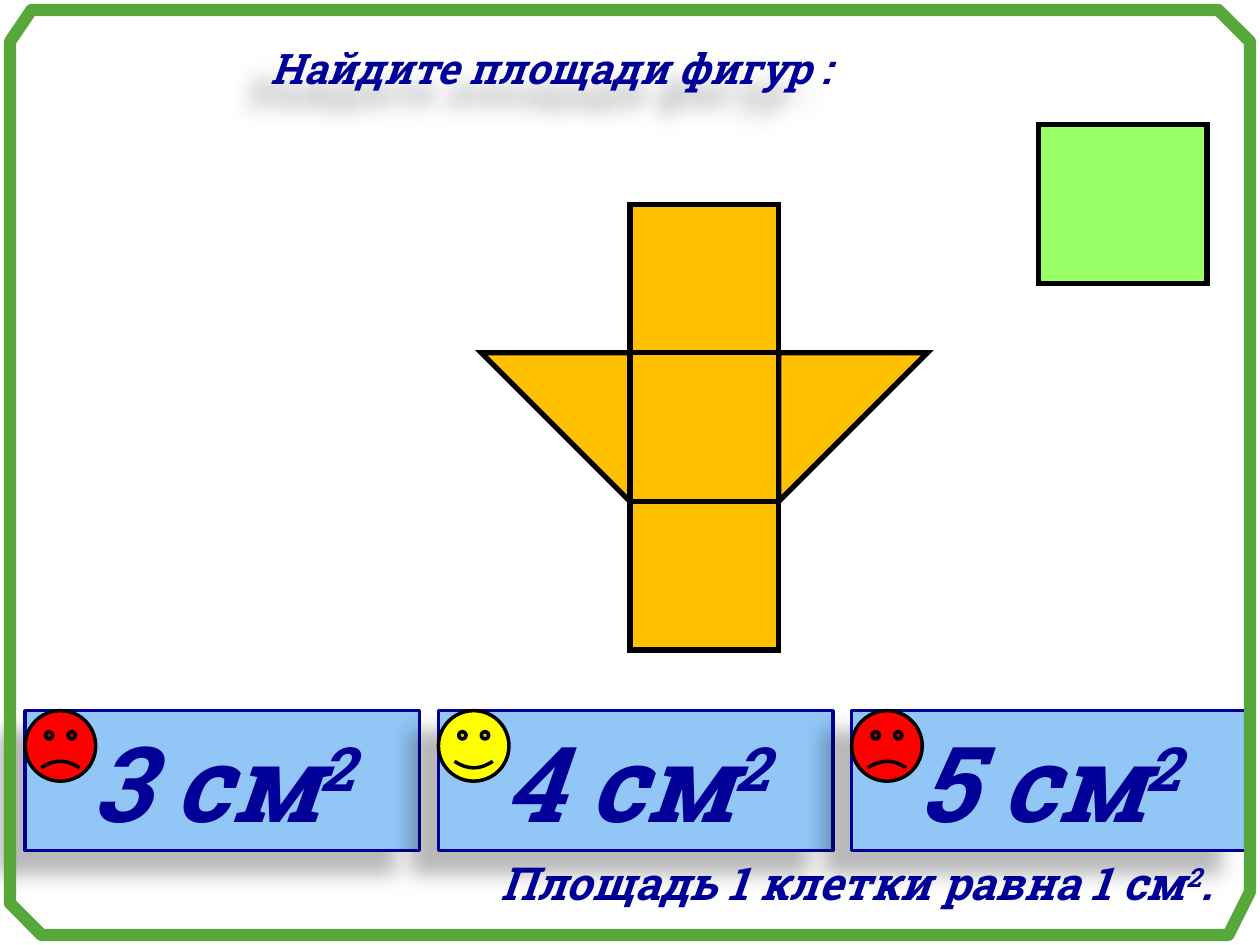
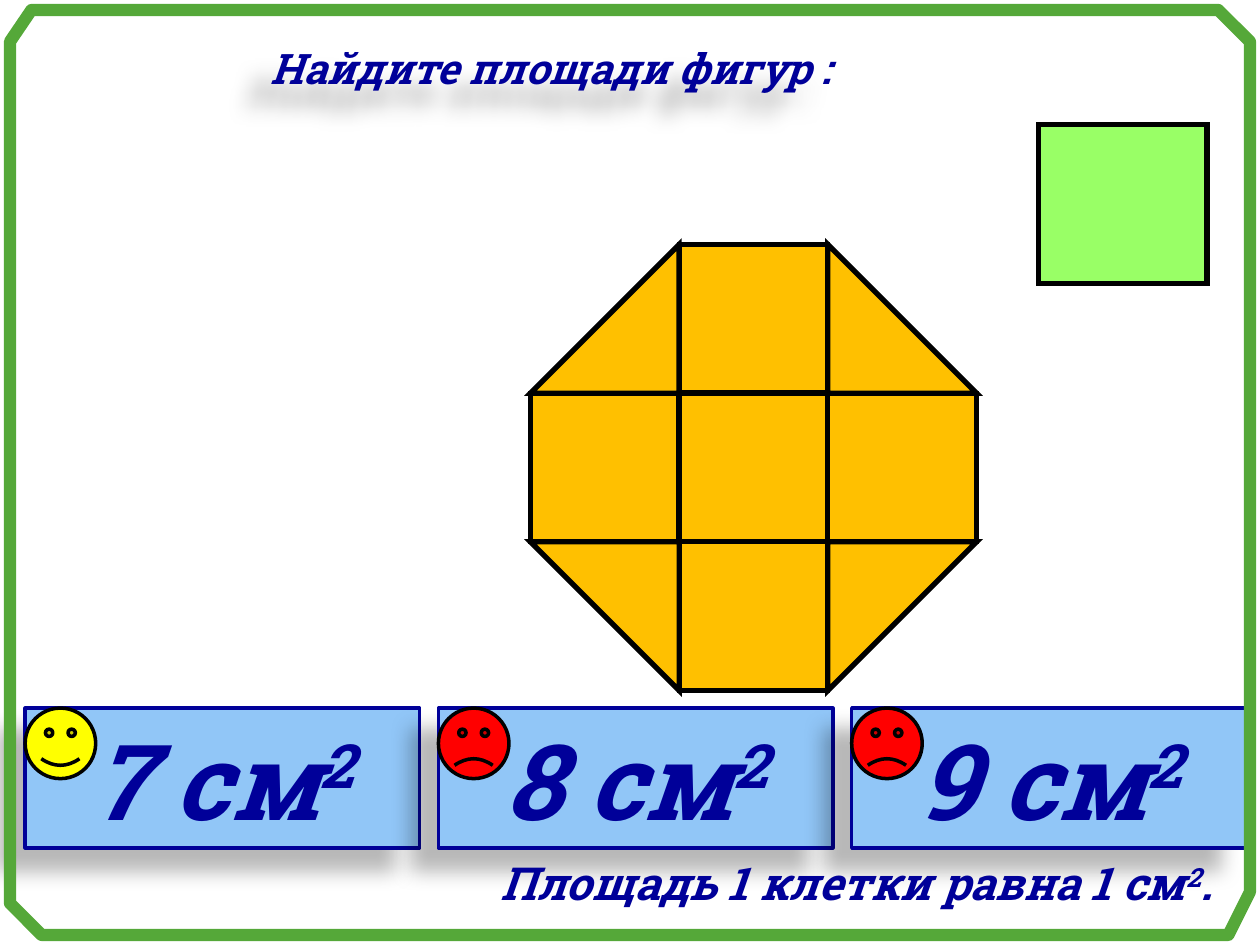
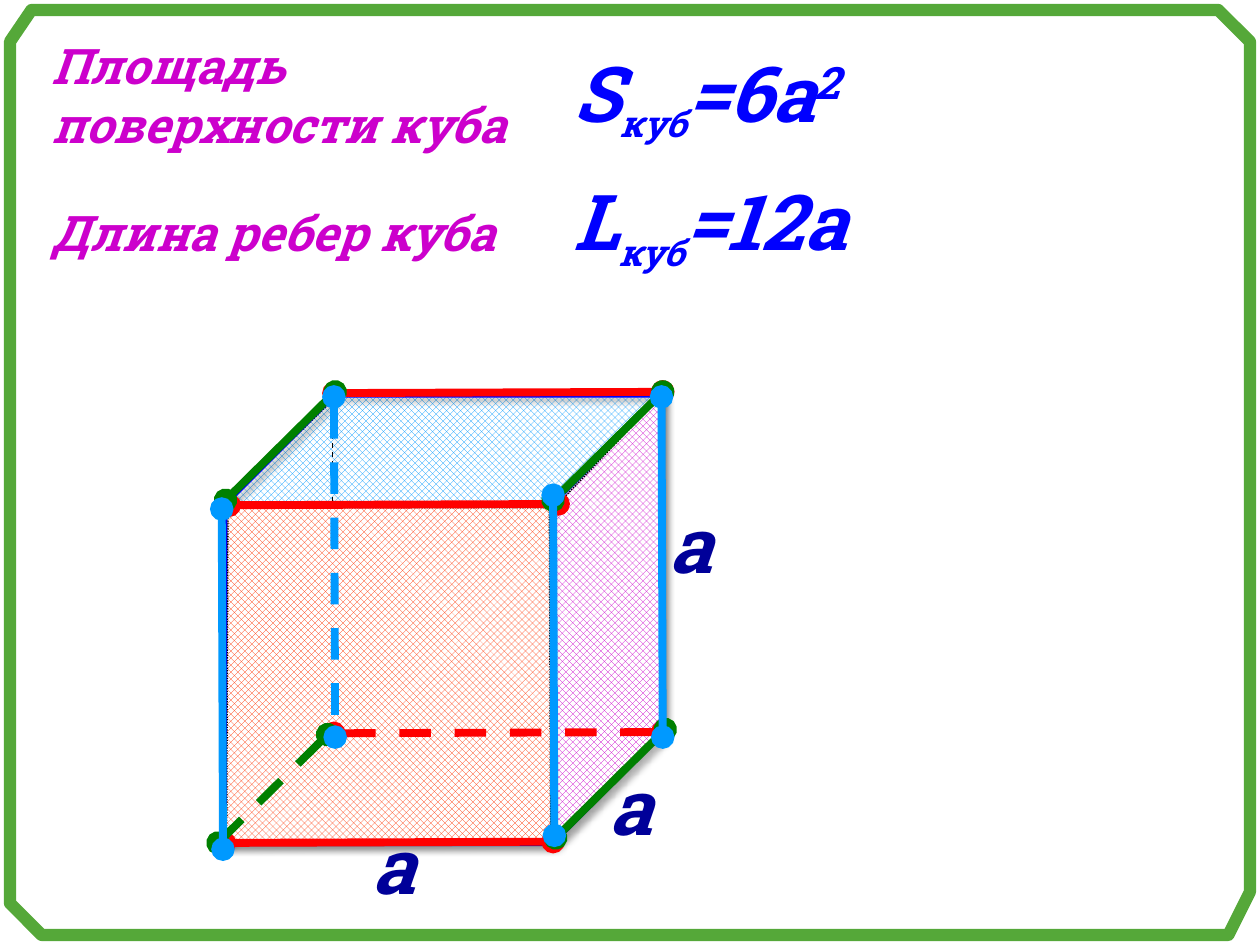
from lxml.etree import SubElement
from pptx import Presentation
from pptx.dml.color import RGBColor
from pptx.enum.dml import MSO_LINE as Dash, MSO_PATTERN as Pat
from pptx.enum.shapes import MSO_CONNECTOR as Conn, MSO_SHAPE as Geo
from pptx.enum.text import MSO_ANCHOR as Anchor, MSO_AUTO_SIZE as Auto, PP_ALIGN as Align
from pptx.oxml import parse_xml
from pptx.oxml.ns import nsdecls, qn
from pptx.util import Inches, Pt

# Shared look
FACE = "Roboto Slab"
NAVY, BLUE, PURPLE, BLACK = "000099", "0000FF", "CC00CC", "000000"
GOLD, LIME, PALE, GREEN = "FFC000", "99FF66", "91C6F7", "55A839"
RED, YELLOW, SKY, LEAF, CORAL = "FF0000", "FFFF00", "0099FF", "008000", "FF3300"
DEEP = (28, 11.8, 19.7, 141)  # alpha %, blur, distance, angle
SOFT = (40, 4, 3, 45)
FRAME = [(0.08, 0.33), (0.08, 7.17), (0.33, 7.42), (9.75, 7.42),
         (9.92, 7.08), (9.92, 0.33), (9.67, 0.08), (0.25, 0.08)]

# Figures drawn on a square grid; each sign is a tile
CELL = 1.18
TURN = {"◣": 0, "◤": 90, "◥": 180, "◢": 270}
PLANE = [" # ", "◥#◤", " # "]
OCTAGON = ["◢#◣", "###", "◥#◤"]


def tint(code):
    return RGBColor.from_string(code)


def box(*sides):
    return [Inches(side) for side in sides]


def cast(shape, shade=None):
    """Give the shape its own effects: one outer shadow or none."""
    effects = parse_xml(f"<a:effectLst {nsdecls('a')}/>")
    if shade:
        alpha, blur, dist, angle = shade
        outer = SubElement(effects, qn("a:outerShdw"), blurRad=str(Pt(blur)),
                           dist=str(Pt(dist)), dir=str(angle * 60000),
                           algn="ctr", rotWithShape="0")
        color = SubElement(outer, qn("a:srgbClr"), val=BLACK)
        SubElement(color, qn("a:alpha"), val=str(alpha * 1000))
    shape._element.spPr.append(effects)


def stroke(shape, color, width, dash=None):
    shape.line.color.rgb = tint(color)
    shape.line.width = Pt(width)
    if dash:
        shape.line.dash_style = dash


def paint(shape, fill, line, width, dash=None, shade=None, sharp=False):
    if fill:
        shape.fill.solid()
        shape.fill.fore_color.rgb = tint(fill)
    else:
        shape.fill.background()
    stroke(shape, line, width, dash)
    if sharp:
        SubElement(shape.line._get_or_add_ln(), qn("a:miter"), lim="800000")
    cast(shape, shade)
    return shape


def write(shape, lines, size, color, align=Align.LEFT, anchor=Anchor.TOP):
    """Each line is a list of runs: (text, baseline %, own size)."""
    frame = shape.text_frame
    look = dict(word_wrap=True, auto_size=Auto.NONE, vertical_anchor=anchor)
    for key, value in look.items():
        setattr(frame, key, value)
    for row, runs in enumerate(lines):
        para = frame.add_paragraph() if row else frame.paragraphs[0]
        para.alignment = align
        for text, base, own in runs:
            run = para.add_run()
            run.text = text
            style = dict(name=FACE, size=Pt(own or size), bold=True, italic=True)
            for key, value in style.items():
                setattr(run.font, key, value)
            run.font.color.rgb = tint(color)
            if base:
                run._r.get_or_add_rPr().set("baseline", str(base * 1000))


def plain(text):
    return [(text, 0, None)]


def label(slide, place, runs, size, color, align=Align.LEFT):
    write(slide.shapes.add_textbox(*box(*place)), [runs], size, color, align)


def head(slide, place, lines, size, color, align=Align.LEFT, shade=None):
    title = slide.shapes.title
    title.left, title.top, title.width, title.height = box(*place)
    title.fill.background()
    cast(title, shade)
    write(title, lines, size, color, align)


def outline(slide, points, close=True):
    first, *rest = [box(*point) for point in points]
    path = slide.shapes.build_freeform(*first, scale=1.0)
    path.add_line_segments(rest, close=close)
    return path.convert_to_shape()


def border(slide):
    paint(outline(slide, FRAME), None, GREEN, 7)


def side(slide, points, color, shade=SOFT):
    """A hatched face of the cube."""
    face = paint(outline(slide, points), None, BLACK, 0.75, Dash.ROUND_DOT, shade)
    face.fill.patterned()
    face.fill.pattern = Pat.OUTLINED_DIAMOND
    face.fill.fore_color.rgb = tint(color)
    face.fill.back_color.rgb = tint("FFFFFF")


def edge(slide, start, end, color, width, dash=None, dots=False, shade=None):
    line = slide.shapes.add_connector(Conn.STRAIGHT, *box(*start, *end))
    stroke(line, color, width, dash)
    if dots:
        for tag in ("a:headEnd", "a:tailEnd"):
            SubElement(line.line._get_or_add_ln(), qn(tag), type="oval")
    cast(line, shade)


def tiles(slide, left, top, rows):
    for row, signs in enumerate(rows):
        for col, sign in enumerate(signs):
            if sign == " ":
                continue
            geo = Geo.RIGHT_TRIANGLE if sign in TURN else Geo.RECTANGLE
            place = box(left + col * CELL, top + row * CELL, CELL, CELL)
            tile = slide.shapes.add_shape(geo, *place)
            tile.rotation = TURN.get(sign, 0)
            paint(tile, GOLD, BLACK, 3, sharp=True)


def answers(slide, top, values, right):
    lefts = [0.2 + 3.28 * col for col in range(len(values))]
    for left, value in zip(lefts, values):
        card = slide.shapes.add_shape(Geo.RECTANGLE, *box(left, top, 3.13, 1.11))
        paint(card, PALE, NAVY, 2, shade=DEEP)
        write(card, [[(f"{value} см", 0, None), ("2", 30, None)]], 60, NAVY,
              Align.CENTER, Anchor.MIDDLE)
    for left, value in zip(lefts, values):
        good = value == right
        mood = slide.shapes.add_shape(Geo.SMILEY_FACE, *box(left, top, 0.56, 0.56))
        mood.adjustments[0] = 0.047 if good else -0.047
        paint(mood, YELLOW if good else RED, BLACK, 2)


def quiz(slide, left, top, rows, level, values, right):
    head(slide, (1.77, 0.29, 5.2, 0.79), [plain("Найдите площади фигур :")],
         24, NAVY, Align.CENTER, DEEP)
    tiles(slide, left, top, rows)
    answers(slide, level, values, right)
    border(slide)
    note = [("Площадь 1 клетки равна 1 см", 0, None), ("2", 30, None), (".", 0, None)]
    label(slide, (2.87, 6.74, 6.85, 0.54), note, 26, NAVY, Align.RIGHT)
    unit = slide.shapes.add_shape(Geo.RECTANGLE, *box(8.24, 0.99, 1.34, 1.26))
    paint(unit, LIME, BLACK, 3, sharp=True)


def solid(slide):
    """Faces of the cube from back to front, then its twelve edges."""
    side(slide, [(1.8, 6.71), (2.65, 5.83), (2.65, 3.17), (1.8, 4.06)], PURPLE)
    side(slide, [(2.64, 3.12), (5.23, 3.14), (5.23, 5.81), (2.64, 5.82)], CORAL)
    for top in (3.12, 5.81):
        side(slide, [(2.7, top), (5.3, top), (4.36, top + 0.88), (1.79, top + 0.88)],
             SKY, None)
    cube = slide.shapes.add_shape(Geo.CUBE, *box(1.79, 3.14, 3.46, 3.56))
    cube.adjustments[0] = 0.25
    paint(cube, None, BLUE, 2.25, shade=SOFT)
    edge(slide, (2.64, 3.16), (2.64, 5.8), BLACK, 0.75, Dash.DASH, shade=SOFT)
    hidden = outline(slide, [(5.25, 5.83), (2.66, 5.82), (1.8, 6.68)], False)
    paint(hidden, None, BLACK, 0.75, Dash.DASH, SOFT)
    side(slide, [(4.4, 6.68), (5.25, 5.81), (5.25, 3.14), (4.4, 4.03)], PURPLE)
    side(slide, [(1.81, 4.03), (4.36, 4.03), (4.37, 6.69), (1.8, 6.7)], CORAL)

    # Parallel edges share a direction; the last of each four is hidden
    sets = [
        (RED, (2.61, -0.01), [(1.78, 6.69), (2.65, 3.12), (1.82, 4.01), (2.65, 5.82)]),
        (LEAF, (-0.87, 0.86), [(5.28, 5.79), (5.26, 3.11), (2.66, 3.11), (2.6, 5.83)]),
        (SKY, (0.01, 2.7), [(5.25, 3.15), (4.39, 3.93), (1.76, 4.04), (2.65, 3.15)]),
    ]
    for color, (dx, dy), starts in sets:
        for x, y in starts:
            dash = Dash.DASH if (x, y) == starts[-1] else None
            edge(slide, (x, y), (x + dx, y + dy), color, 4.5, dash, dots=True)
    for left, top in [(2.85, 6.44), (4.73, 5.97), (5.21, 3.89)]:
        label(slide, (left, top, 1.04, 0.84), plain("a"), 44, NAVY)


def rules(slide):
    head(slide, (0.31, 0.23, 4.18, 1.04),
         [plain("Площадь"), plain("поверхности куба")], 28, PURPLE)
    label(slide, (0.31, 1.56, 4.06, 0.57), plain("Длина ребер куба"), 28, PURPLE)
    sub = ("куб", -25, 36)
    area = [("S", 0, None), sub, ("=6a", 0, None), ("2", 30, None)]
    length = [("L", 0, None), sub, ("=12a", 0, None)]
    for top, runs in [(0.31, area), (1.33, length)]:
        label(slide, (4.45, top, 2.87, 0.84), runs, 44, BLUE)
    solid(slide)
    border(slide)


def main():
    deck = Presentation()
    deck.slide_width, deck.slide_height = box(10, 7.5)
    first, second, third = [deck.slides.add_slide(deck.slide_layouts[5])
                            for _ in range(3)]
    quiz(first, 3.82, 1.62, PLANE, 5.64, (3, 4, 5), 4)
    quiz(second, 4.21, 1.94, OCTAGON, 5.62, (7, 8, 9), 7)
    rules(third)
    deck.save("out.pptx")


if __name__ == "__main__":
    main()
